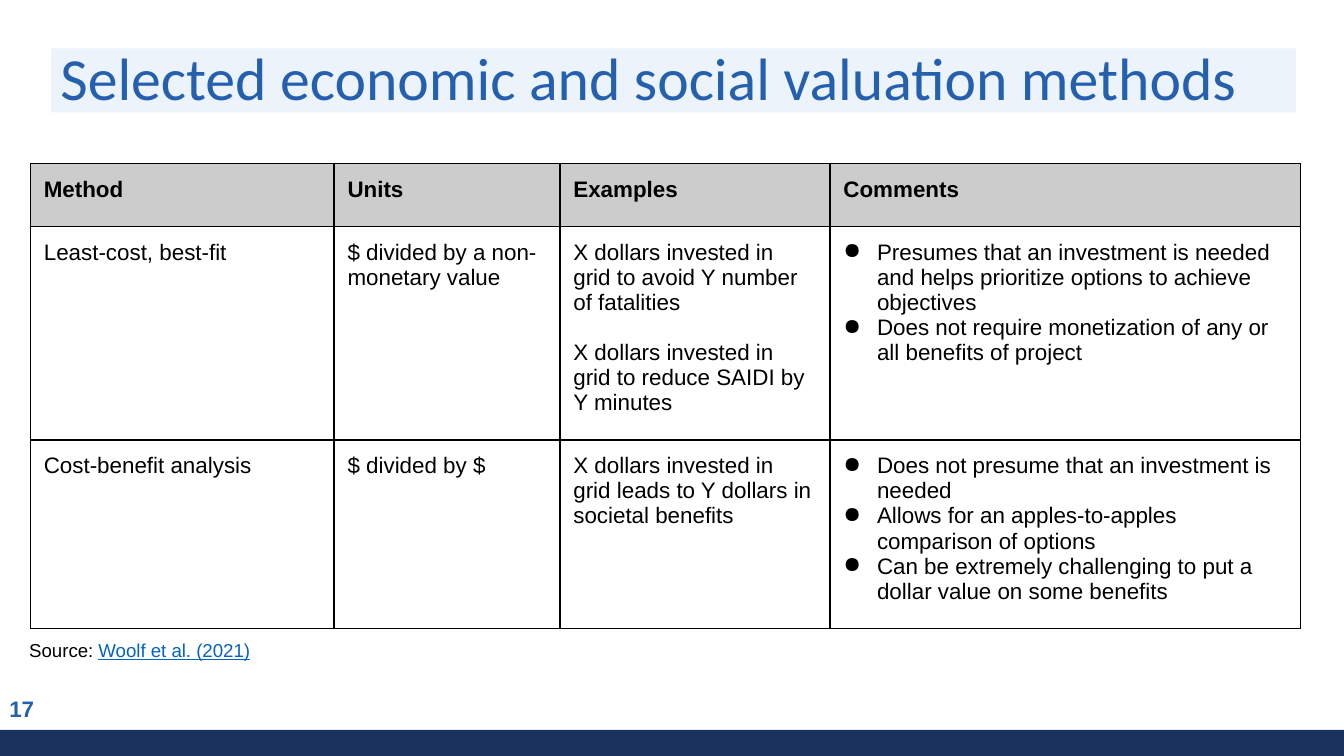
"""Build a slide that compares economic and social valuation methods in a table."""
from typing import NamedTuple

from lxml import etree
from pptx import Presentation
from pptx import util as u
from pptx.dml.color import RGBColor
from pptx.enum import shapes, text
from pptx.oxml import ns

BLACK = RGBColor(0x00, 0x00, 0x00)
BLUE = RGBColor(0x24, 0x60, 0xAD)
NAVY = RGBColor(0x1A, 0x32, 0x5D)
PALE = RGBColor(0xEC, 0xF3, 0xFA)
GREY = RGBColor(0xCC, 0xCC, 0xCC)
LINK = RGBColor(0x05, 0x63, 0xC1)

INSET = 7.2
INDENT = 18
LINE_HEIGHT = 13.5
COLUMN_WIDTHS = (162.7, 121, 144.7, 252)
HEADINGS = ("Method", "Units", "Examples", "Comments")


class Area(NamedTuple):
    left: float
    top: float
    width: float
    height: float


class Style(NamedTuple):
    size: float
    color: RGBColor = BLACK
    font: str = "Arial"
    bold: bool = False
    underline: bool = False


class Method(NamedTuple):
    name: str
    units: str
    examples: tuple[str, ...]
    comments: tuple[str, ...]
    height: float


METHODS = (
    Method(
        "Least-cost, best-fit",
        "$ divided by a non-monetary value",
        (
            "X dollars invested in grid to avoid Y number of fatalities",
            "X dollars invested in grid to reduce SAIDI by Y minutes",
        ),
        (
            "Presumes that an investment is needed and helps prioritize options to achieve objectives",
            "Does not require monetization of any or all benefits of project",
        ),
        108.7,
    ),
    Method(
        "Cost-benefit analysis",
        "$ divided by $",
        ("X dollars invested in grid leads to Y dollars in societal benefits",),
        (
            "Does not presume that an investment is needed",
            "Allows for an apples-to-apples comparison of options",
            "Can be extremely challenging to put a dollar value on some benefits",
        ),
        94.9,
    ),
)
HEADER_HEIGHT = 33.8
BODY = Style(12)
HEADER = Style(12, bold=True)


def points(area: Area) -> list[u.Length]:
    return [u.Pt(length) for length in area]


def style_span(span, style: Style) -> None:
    font = span.font
    font.size, font.name = u.Pt(style.size), style.font
    font.bold, font.underline = style.bold, style.underline
    font.color.rgb = style.color


def add_band(slide, area: Area, color: RGBColor) -> None:
    band = slide.shapes.add_shape(shapes.MSO_SHAPE.RECTANGLE, *points(area))
    band.shadow.inherit = False
    band.fill.solid()
    band.fill.fore_color.rgb = color
    band.line.fill.background()


def add_text(slide, area: Area, spans: list[tuple[str, Style]],
             inset: tuple[float, float] = (5, 2.2), middle: bool = True):
    frame = slide.shapes.add_textbox(*points(area)).text_frame
    frame.word_wrap = True
    frame.margin_left = frame.margin_right = u.Pt(inset[0])
    frame.margin_top = frame.margin_bottom = u.Pt(inset[1])
    frame.vertical_anchor = text.MSO_ANCHOR.MIDDLE if middle else text.MSO_ANCHOR.TOP
    para = frame.paragraphs[0]
    for wording, style in spans:
        span = para.add_run()
        span.text = wording
        style_span(span, style)
    return para


def add_bullet(para) -> None:
    properties = para._p.get_or_add_pPr()
    properties.set("marL", str(u.Pt(INDENT)))
    properties.set("indent", str(-u.Pt(INDENT)))
    color = etree.SubElement(properties, ns.qn("a:buClr"))
    etree.SubElement(color, ns.qn("a:srgbClr"), val=str(BLACK))
    etree.SubElement(properties, ns.qn("a:buChar"), char="●")


def add_borders(cell) -> None:
    properties = cell._tc.get_or_add_tcPr()
    for side in ("lnL", "lnR", "lnT", "lnB"):
        line = etree.SubElement(properties, ns.qn(f"a:{side}"), w=str(u.Pt(0.75)))
        fill = etree.SubElement(line, ns.qn("a:solidFill"))
        etree.SubElement(fill, ns.qn("a:srgbClr"), val=str(BLACK))


def fill_cell(cell, lines: tuple[str, ...], style: Style = BODY,
              bulleted: bool = False, gap: float = 0) -> None:
    add_borders(cell)
    cell.fill.background()
    cell.margin_left = cell.margin_right = u.Pt(INSET)
    cell.margin_top = cell.margin_bottom = u.Pt(INSET)
    cell.text_frame.text = "\n".join(lines)
    for index, para in enumerate(cell.text_frame.paragraphs):
        if index and gap:
            para.space_before = u.Pt(gap)
        if bulleted:
            add_bullet(para)
        style_span(para.runs[0], style)


def add_methods_table(slide, left: float, top: float) -> None:
    heights = (HEADER_HEIGHT, *(method.height for method in METHODS))
    area = Area(left, top, sum(COLUMN_WIDTHS), sum(heights))
    table = slide.shapes.add_table(len(heights), len(COLUMN_WIDTHS), *points(area)).table
    table.first_row = table.horz_banding = False
    for column, width in zip(table.columns, COLUMN_WIDTHS):
        column.width = u.Pt(width)
    for row, height in zip(table.rows, heights):
        row.height = u.Pt(height)
    for cell, heading in zip(table.rows[0].cells, HEADINGS):
        fill_cell(cell, (heading,), HEADER)
        cell.fill.solid()
        cell.fill.fore_color.rgb = GREY
    for index, method in enumerate(METHODS, start=1):
        name, units, examples, comments = table.rows[index].cells
        fill_cell(name, (method.name,))
        fill_cell(units, (method.units,))
        fill_cell(examples, method.examples, gap=LINE_HEIGHT)
        fill_cell(comments, method.comments, bulleted=True)


def main() -> None:
    deck = Presentation()
    deck.slide_width, deck.slide_height = u.Pt(720), u.Pt(405)
    page = deck.slides.add_slide(deck.slide_layouts[6])
    add_band(page, Area(27.4, 25.9, 667, 34.4), PALE)
    add_band(page, Area(0, 391, 720, 14), NAVY)
    title = add_text(page, Area(27.4, 29.5, 648, 27.4),
                     [("Selected economic and social valuation methods", Style(32, BLUE, "Calibri"))])
    title.line_spacing = 0.9
    add_text(page, Area(0, 368.6, 162, 21.6), [("17", Style(12, BLUE, bold=True))])
    add_methods_table(page, 16.3, 87.6)
    add_text(page, Area(8.6, 336.2, 283.7, 26.6),
             [("Source: ", Style(10)), ("Woolf et al. (2021)", Style(10, LINK, underline=True))],
             (INSET, INSET), middle=False)
    deck.save("out.pptx")


if __name__ == "__main__":
    main()
